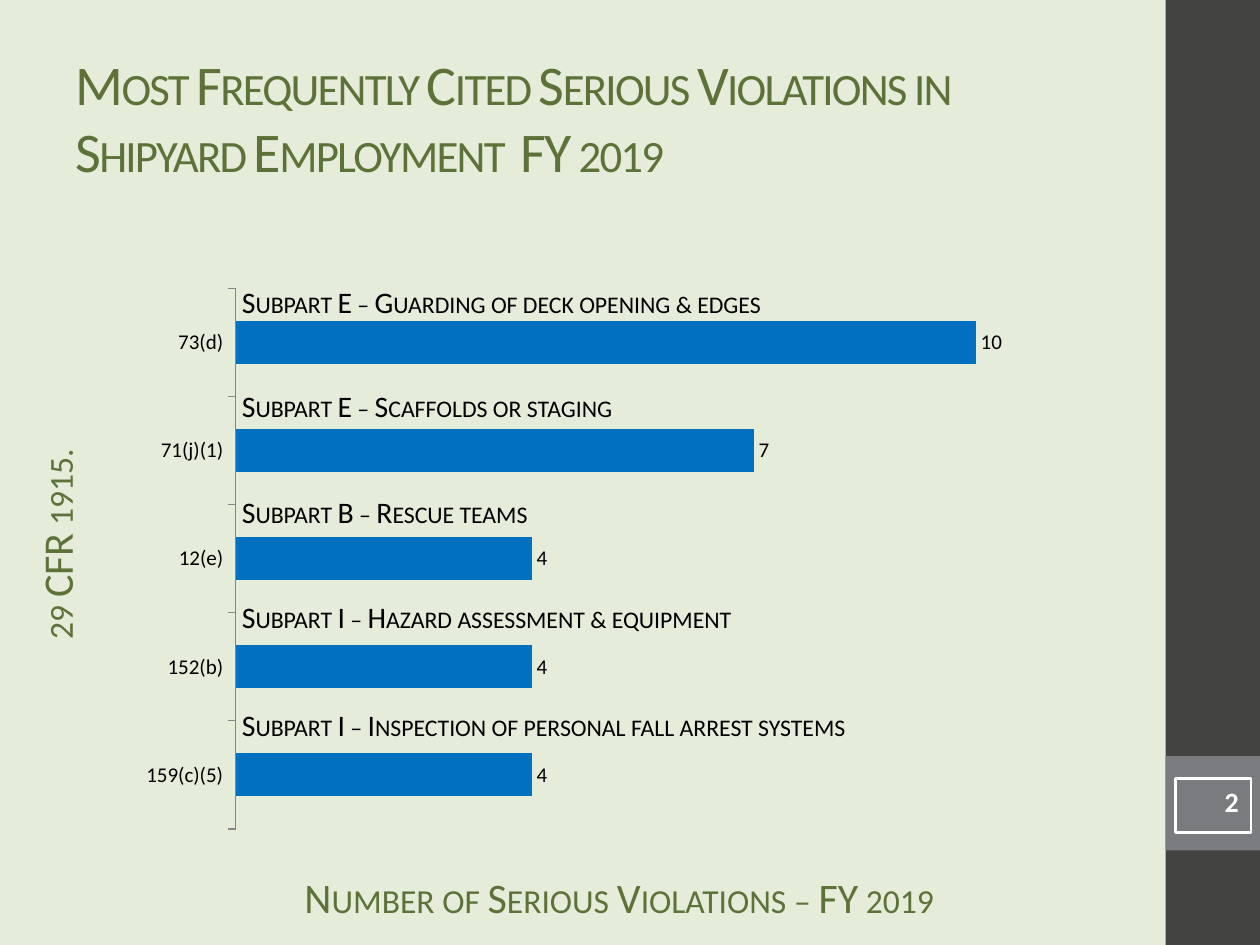
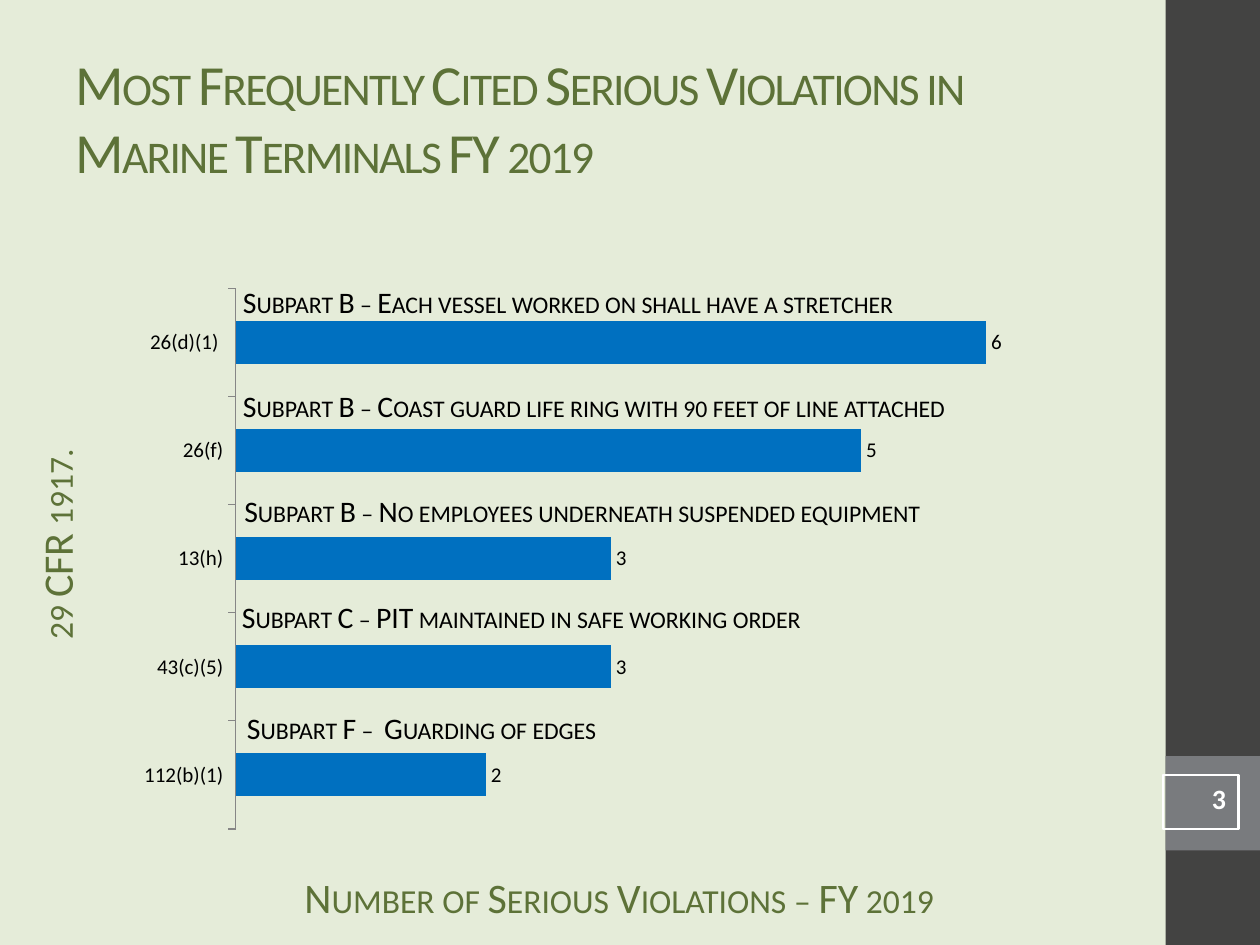
import lxml.etree
import pptx
import pptx.chart.data
import pptx.dml.color
import pptx.enum.chart
import pptx.enum.shapes
import pptx.enum.text
import pptx.oxml.ns
import pptx.util

Inches = pptx.util.Inches
Pt = pptx.util.Pt
Align = pptx.enum.text.PP_ALIGN
Anchor = pptx.enum.text.MSO_ANCHOR

PAPER = "E5ECD9"
GREEN = "5D7238"
BLACK = "000000"
WHITE = "FFFFFF"
DARK = "434342"
GREY = "797B7E"
BLUE = "0070C0"
AXIS = "868686"
FONT = "Calibri"
NONE = (0, 0, 0, 0)
FULL = (0.1, 0.05, 0.1, 0.05)
CAPTION = (0.1, 0, 0.1, 0.05)
PLOT_LEFT, PLOT_TOP, PLOT_HIGH = 1.87, 2.29, 4.29


def color(code):
    return pptx.dml.color.RGBColor.from_string(code)


def write(frame, text, size=17, ink=BLACK, bold=False, small=True, space=0,
          align=Align.LEFT, anchor=Anchor.TOP, pad=NONE):
    frame.word_wrap = True
    frame.vertical_anchor = anchor
    frame.margin_left, frame.margin_top, frame.margin_right, frame.margin_bottom = map(Inches, pad)
    para = frame.paragraphs[0]
    para.text = text
    para.alignment = align
    for run in para.runs:
        font = run.font
        font.name, font.size, font.bold = FONT, Pt(size), bold
        font.color.rgb = color(ink)
        props = run._r.get_or_add_rPr()
        if small:
            props.set("cap", "small")
        if space:
            props.set("spc", str(space * 100))


class Deck:
    def __init__(self):
        self.file = pptx.Presentation()
        self.file.slide_width, self.file.slide_height = Inches(10), Inches(7.5)
        fill = self.file.slide_master.background.fill
        fill.solid()
        fill.fore_color.rgb = color(PAPER)
        self.slide = None

    def start(self):
        self.slide = self.file.slides.add_slide(self.file.slide_layouts[6])
        self.box((9.25, 0, 0.75, 7.5), DARK)
        self.box((9.25, 6, 0.75, 0.75), GREY)
        self.text((2.08, 6.92, 5.67, 0.33), "Number of Serious Violations – FY 2019",
                  size=24, ink=GREEN, align=Align.CENTER, pad=CAPTION)

    def box(self, place, fill=None, line=None):
        shape = self.slide.shapes.add_shape(
            pptx.enum.shapes.MSO_SHAPE.RECTANGLE, *map(Inches, place))
        shape.shadow.inherit = False
        if fill:
            shape.fill.solid()
            shape.fill.fore_color.rgb = color(fill)
        else:
            shape.fill.background()
        if line:
            shape.line.color.rgb = color(line)
            shape.line.width = Pt(1.5)
        else:
            shape.line.fill.background()
        return shape

    def text(self, place, words, turn=0, **style):
        shape = self.slide.shapes.add_textbox(*map(Inches, place))
        shape.rotation = turn
        write(shape.text_frame, words, **style)

    def title(self, words, size):
        self.text((0.5, 0.3, 8.33, 1.25), words, size=size, ink=GREEN,
                  space=-1, anchor=Anchor.MIDDLE, pad=FULL)

    def side(self, words):
        self.text((-1.56, 4.03, 4.19, 0.58), words, turn=270, size=24,
                  ink=GREEN, align=Align.CENTER, pad=CAPTION)

    def number(self, left, top, words):
        shape = self.box((left, top, 0.6, 0.43), line=WHITE)
        write(shape.text_frame, words, size=16, ink=WHITE, bold=True,
              small=False, align=Align.RIGHT, pad=FULL)

    def chart(self, wide, plot, top, cats, vals):
        left, head, high = 1, 2.2, 4.46
        data = pptx.chart.data.CategoryChartData()
        data.categories = cats
        data.add_series("Series 1", vals)
        chart = self.slide.shapes.add_chart(
            pptx.enum.chart.XL_CHART_TYPE.BAR_CLUSTERED,
            *map(Inches, (left, head, wide, high)), data).chart
        chart.has_legend = chart.has_title = False
        chart.font.name, chart.font.size = FONT, Pt(10)
        chart.font.color.rgb = color(BLACK)
        axis = chart.category_axis
        axis.tick_labels.font.size = Pt(12)
        axis.major_tick_mark = pptx.enum.chart.XL_TICK_MARK.OUTSIDE
        axis.format.line.color.rgb = color(AXIS)
        scale = chart.value_axis
        scale.visible = scale.has_major_gridlines = False
        scale.minimum_scale, scale.maximum_scale = 0, top
        bars = chart.plots[0]
        bars.gap_width = 150
        bars.vary_by_categories = False
        fill = bars.series[0].format.fill
        fill.solid()
        fill.fore_color.rgb = color(BLUE)
        bars.has_data_labels = True
        labels = bars.data_labels
        labels.show_value = True
        labels.position = pptx.enum.chart.XL_LABEL_POSITION.OUTSIDE_END
        labels.font.size = Pt(12)
        self.fit(chart, ((PLOT_LEFT - left) / wide, (PLOT_TOP - head) / high,
                         plot / wide, PLOT_HIGH / high))

    def fit(self, chart, parts):
        qn = pptx.oxml.ns.qn
        area = chart._chartSpace.find(".//" + qn("c:plotArea"))
        old = area.find(qn("c:layout"))
        if old is not None:
            area.remove(old)
        layout = lxml.etree.Element(qn("c:layout"))
        area.insert(0, layout)
        manual = lxml.etree.SubElement(layout, qn("c:manualLayout"))
        rules = [("layoutTarget", "inner"), ("xMode", "edge"), ("yMode", "edge")]
        rules += [(name, f"{part:.4f}") for name, part in zip("xywh", parts)]
        for name, value in rules:
            lxml.etree.SubElement(manual, qn("c:" + name)).set("val", value)


def main():
    deck = Deck()
    pages = [
        dict(title="Most Frequently Cited Serious Violations in \vShipyard Employment  FY 2019",
             size=32, side="29 CFR 1915.", number=(9.33, 6.18, "2"),
             chart=(8.08, 7.05, 12,
                    ["159(c)(5)", "152(b)", "12(e)", "71(j)(1)", "73(d)"], [4, 4, 4, 7, 10]),
             notes=[
                 ((1.92, 2.25, 5.42, 0.29), "Subpart E – Guarding of deck opening & edges", NONE),
                 ((1.92, 3.08, 4.92, 0.28), "Subpart E – Scaffolds or staging", NONE),
                 ((1.92, 3.92, 5.42, 0.33), "Subpart B – Rescue teams", NONE),
                 ((1.92, 4.75, 6.58, 0.29), "Subpart I – Hazard assessment & equipment", NONE),
                 ((1.92, 5.61, 6.42, 0.39),
                  "Subpart I – Inspection of personal fall arrest systems", NONE)]),
        dict(title="Most Frequently Cited Serious Violations in Marine Terminals FY 2019",
             size=32.4, side="29 CFR 1917.", number=(9.23, 6.15, "3"),
             chart=(8, 6.95, 7,
                    ["112(b)(1)", "43(c)(5)", "13(h)", "26(f)", "26(d)(1) "], [2, 3, 3, 5, 6]),
             notes=[
                 ((1.83, 2.2, 6.83, 0.39),
                  "Subpart B – Each vessel worked on shall have a stretcher", FULL),
                 ((1.83, 3.03, 6.25, 0.39),
                  "Subpart B – Coast guard life ring with 90 feet of line attached", FULL),
                 ((1.84, 3.86, 6.49, 0.39),
                  "Subpart B – No employees underneath suspended equipment", FULL),
                 ((1.92, 4.75, 5.92, 0.33),
                  "Subpart C – PIT maintained in safe working order", NONE),
                 ((1.96, 5.63, 6.71, 0.37), "Subpart F –  Guarding of edges", NONE)]),
    ]
    for page in pages:
        deck.start()
        deck.chart(*page["chart"])
        deck.title(page["title"], page["size"])
        deck.number(*page["number"])
        for place, words, pad in page["notes"]:
            deck.text(place, words, pad=pad)
        deck.side(page["side"])
    deck.file.save("out.pptx")


if __name__ == "__main__":
    main()
